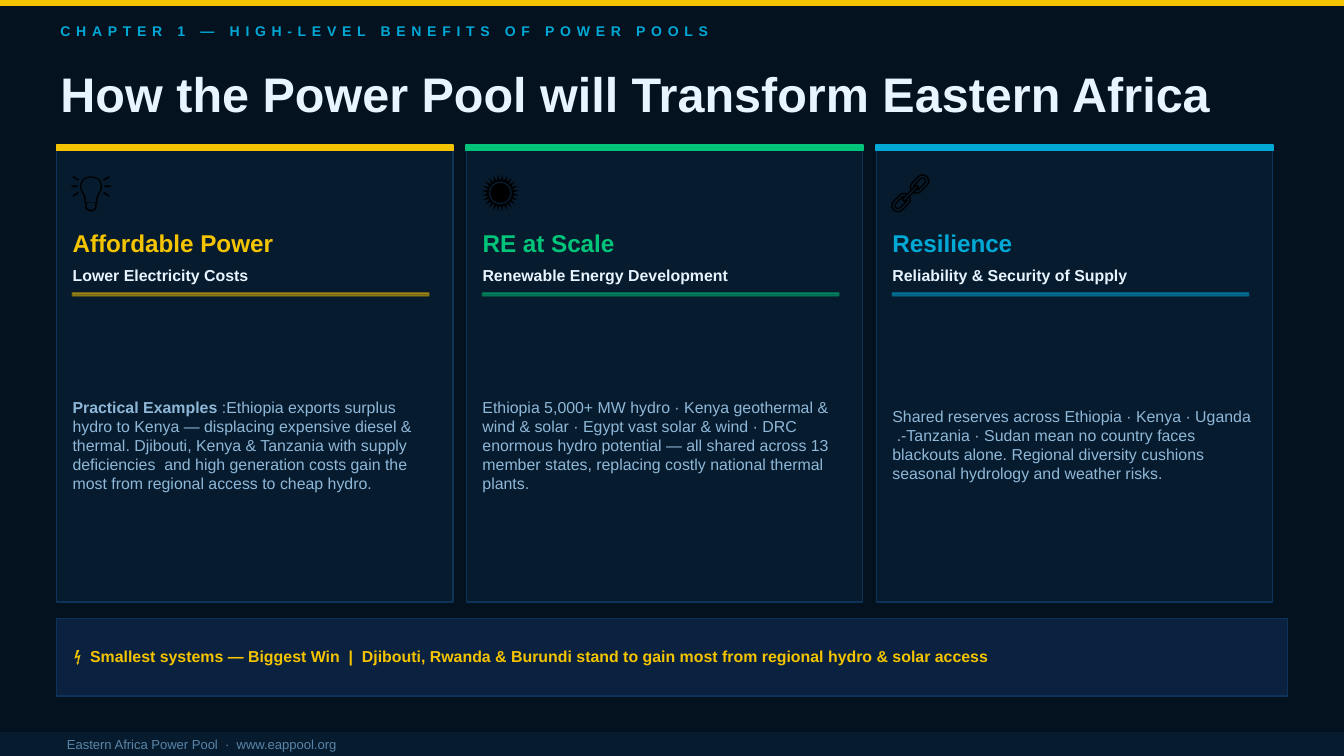
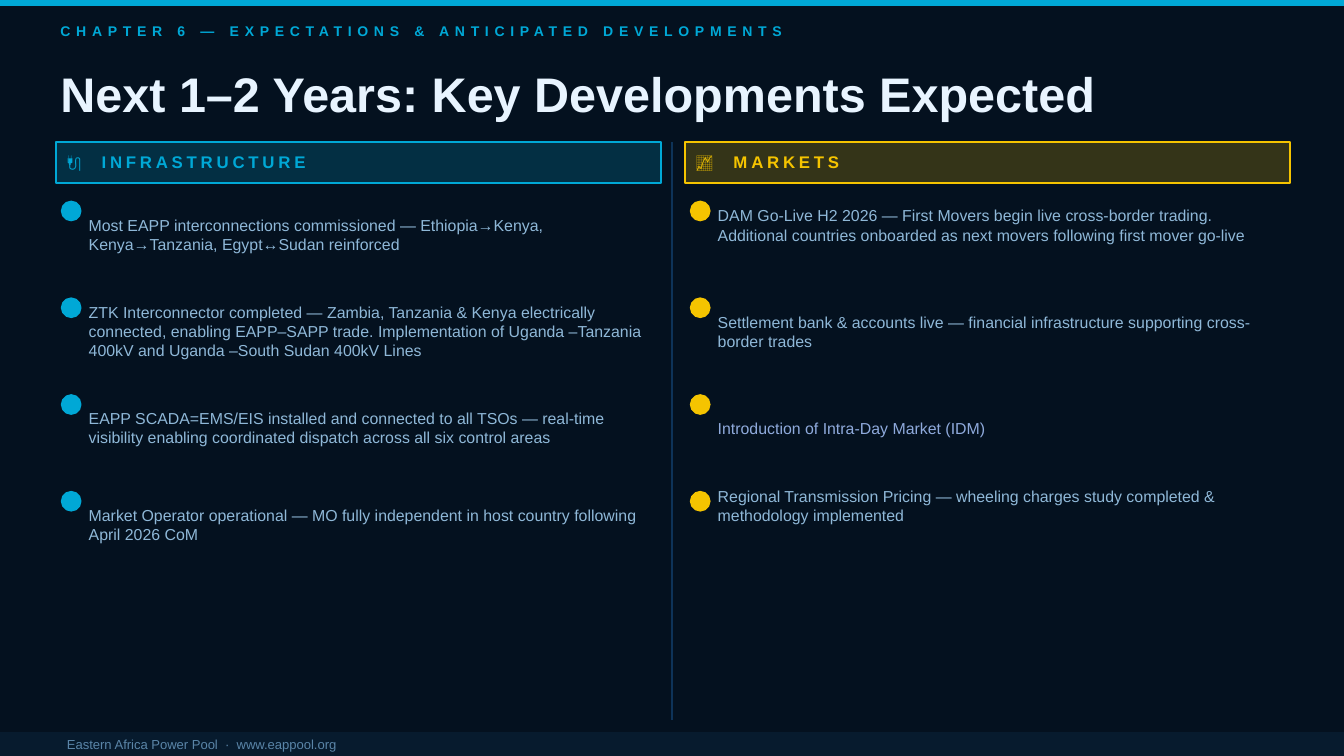
from dataclasses import dataclass
from typing import NamedTuple

from lxml.etree import SubElement
from pptx import Presentation
from pptx.dml.color import RGBColor
from pptx.enum.shapes import MSO_CONNECTOR, MSO_SHAPE
from pptx.enum.text import MSO_ANCHOR
from pptx.oxml.ns import qn
from pptx.presentation import Presentation as Deck
from pptx.slide import Slide
from pptx.util import Emu, Pt

EMU_PER_PX = 9144


@dataclass(frozen=True)
class Theme:
    font: str = "Arial"
    background: str = "04111F"
    panel: str = "071B2E"
    callout: str = "0A2240"
    border: str = "0E3358"
    heading: str = "E8F4FF"
    body: str = "8FB8D8"
    body_violet: str = "8FAADC"
    footer: str = "5A85A8"
    icon: str = "000000"
    yellow: str = "F5C400"
    green: str = "00C47A"
    blue: str = "00A8D6"
    title_size: float = 26
    icon_size: float = 22
    card_size: float = 13
    column_size: float = 9
    body_size: float = 8.5
    chapter_size: float = 7.5
    footer_size: float = 7
    border_width: float = 0.75


THEME = Theme()


class Box(NamedTuple):
    left: int
    top: int
    width: int
    height: int


class Card(NamedTuple):
    icon: str
    title: str
    subtitle: str
    text: str
    color: str
    lead: str = ""


class Item(NamedTuple):
    paragraphs: tuple[str, ...]
    color: str = THEME.body
    height: int = 65


class Column(NamedTuple):
    heading: str
    color: str
    items: tuple[Item, ...]


CARDS = (
    Card(
        "💡", "Affordable Power", "Lower Electricity Costs",
        ":Ethiopia exports surplus hydro to Kenya — displacing expensive diesel & thermal. "
        "Djibouti, Kenya & Tanzania with supply deficiencies  and high generation costs "
        "gain the most from regional access to cheap hydro.",
        THEME.yellow, "Practical Examples ",
    ),
    Card(
        "☀️", "RE at Scale", "Renewable Energy Development",
        "Ethiopia 5,000+ MW hydro · Kenya geothermal & wind & solar · Egypt vast solar & wind · "
        "DRC enormous hydro potential — all shared across 13 member states, "
        "replacing costly national thermal plants.",
        THEME.green,
    ),
    Card(
        "🔗", "Resilience", "Reliability & Security of Supply",
        "Shared reserves across Ethiopia · Kenya · Uganda   .-Tanzania · Sudan mean no country "
        "faces blackouts alone. Regional diversity cushions seasonal hydrology and weather risks.",
        THEME.blue,
    ),
)

COLUMNS = (
    Column("🔌  INFRASTRUCTURE", THEME.blue, (
        Item(("Most EAPP interconnections commissioned — Ethiopia→Kenya, "
              "Kenya→Tanzania, Egypt↔Sudan reinforced",)),
        Item(("ZTK Interconnector completed — Zambia, Tanzania & Kenya electrically connected, "
              "enabling EAPP–SAPP trade. Implementation of Uganda –Tanzania 400kV "
              "and Uganda –South Sudan 400kV Lines",)),
        Item(("EAPP SCADA=EMS/EIS installed and connected to all TSOs — real-time visibility "
              "enabling coordinated dispatch across all six control areas",)),
        Item(("Market Operator operational — MO fully independent in host country "
              "following April 2026 CoM",)),
    )),
    Column("📈  MARKETS", THEME.yellow, (
        Item(("DAM Go-Live H2 2026 — First Movers begin live cross-border trading.",
              "Additional countries onboarded as next movers following first mover go-live"),
             height=51),
        Item(("Settlement bank & accounts live — financial infrastructure supporting "
              "cross-border trades",)),
        Item(("Introduction of Intra-Day Market (IDM)",), color=THEME.body_violet),
        Item(("Regional Transmission Pricing — wheeling charges study completed & "
              "methodology implemented",), height=37),
    )),
)


def px(length: int) -> Emu:
    return Emu(length * EMU_PER_PX)


def rgb(color: str) -> RGBColor:
    return RGBColor.from_string(color)


def add_text(
    slide: Slide, box: Box, *paragraphs: str, size: float = THEME.body_size,
    color: str = THEME.body, bold: bool = False, tracking: int = 0,
    lead: str = "", side_inset: int = 0,
) -> None:
    frame = slide.shapes.add_textbox(*map(px, box)).text_frame
    frame.word_wrap = True
    frame.vertical_anchor = MSO_ANCHOR.MIDDLE
    frame.margin_left = frame.margin_right = px(side_inset)
    frame.margin_top = frame.margin_bottom = 0
    for index, text in enumerate(paragraphs):
        paragraph = frame.add_paragraph() if index else frame.paragraphs[0]
        runs = [(text, bold)]
        if lead and not index:
            runs.insert(0, (lead, True))
        for content, is_bold in runs:
            run = paragraph.add_run()
            run.text = content
            run.font.name = THEME.font
            run.font.size = Pt(size)
            run.font.bold = is_bold
            run.font.color.rgb = rgb(color)
            if tracking:
                run.font._element.set("spc", str(tracking * 100))


def add_panel(
    slide: Slide, box: Box, fill: str, line: str = "", width: float = 1,
    kind: MSO_SHAPE = MSO_SHAPE.RECTANGLE, fill_alpha: int = 100, line_alpha: int = 100,
) -> None:
    shape = slide.shapes.add_shape(kind, *map(px, box))
    shape.shadow.inherit = False
    shape.fill.solid()
    shape.fill.fore_color.rgb = rgb(fill)
    shape.line.color.rgb = rgb(line or fill)
    shape.line.width = Pt(width)
    properties = shape.element.spPr
    for parent, alpha in ((properties, fill_alpha), (properties.find(qn("a:ln")), line_alpha)):
        if alpha < 100:
            color = parent.find(qn("a:solidFill")).find(qn("a:srgbClr"))
            SubElement(color, qn("a:alpha")).set("val", str(alpha * 1000))


def add_divider(slide: Slide, left: int, top: int, bottom: int) -> None:
    line = slide.shapes.add_connector(
        MSO_CONNECTOR.STRAIGHT, px(left), px(top), px(left), px(bottom)
    )
    line.line.color.rgb = rgb(THEME.border)
    line.line.width = Pt(THEME.border_width)
    SubElement(line.element.spPr, qn("a:effectLst"))


def add_base_slide(presentation: Deck, chapter: str, title: str, accent: str) -> Slide:
    slide = presentation.slides.add_slide(presentation.slide_layouts[6])
    slide.background.fill.solid()
    slide.background.fill.fore_color.rgb = rgb(THEME.background)
    add_panel(slide, Box(0, 0, 1000, 4), accent)
    add_text(slide, Box(45, 12, 900, 22), chapter,
             size=THEME.chapter_size, color=THEME.blue, bold=True, tracking=3)
    add_text(slide, Box(45, 42, 910, 55), title,
             size=THEME.title_size, color=THEME.heading, bold=True)
    add_panel(slide, Box(0, 545, 1000, 18), THEME.panel)
    add_text(slide, Box(40, 546, 920, 15), "Eastern Africa Power Pool  ·  www.eappool.org",
             size=THEME.footer_size, color=THEME.footer, side_inset=10)
    return slide


def add_card(slide: Slide, left: int, card: Card) -> None:
    inner = left + 12
    add_panel(slide, Box(left, 108, 295, 340), THEME.panel, THEME.border, THEME.border_width)
    add_panel(slide, Box(left, 108, 295, 4), card.color)
    add_text(slide, Box(left + 10, 118, 60, 45), card.icon,
             size=THEME.icon_size, color=THEME.icon)
    add_text(slide, Box(inner, 166, 275, 30), card.title,
             size=THEME.card_size, color=card.color, bold=True)
    add_text(slide, Box(inner, 194, 275, 22), card.subtitle, color=THEME.heading, bold=True)
    add_panel(slide, Box(inner, 218, 265, 2), card.color, fill_alpha=40, line_alpha=40)
    add_text(slide, Box(inner, 226, 273, 210), card.text, lead=card.lead)


def add_column(slide: Slide, left: int, column: Column) -> None:
    add_panel(slide, Box(left, 106, 450, 30), column.color, fill_alpha=20)
    add_text(slide, Box(left + 8, 107, 430, 27), column.heading,
             size=THEME.column_size, color=column.color, bold=True, tracking=2)
    for row, item in enumerate(column.items):
        top = 142 + row * 72
        add_panel(slide, Box(left + 4, top + 8, 14, 14), column.color, kind=MSO_SHAPE.OVAL)
        add_text(slide, Box(left + 24, top, 418, item.height), *item.paragraphs,
                 color=item.color)


def build_benefits(presentation: Deck) -> None:
    slide = add_base_slide(
        presentation, "CHAPTER 1 — HIGH-LEVEL BENEFITS OF POWER POOLS",
        "How the Power Pool will Transform Eastern Africa", THEME.yellow,
    )
    for index, card in enumerate(CARDS):
        add_card(slide, 42 + index * 305, card)
    add_panel(slide, Box(42, 460, 916, 58), THEME.callout, THEME.border, THEME.border_width)
    add_text(
        slide, Box(55, 462, 900, 52),
        "⚡  Smallest systems — Biggest Win  |  Djibouti, Rwanda & Burundi stand to gain most "
        "from regional hydro & solar access",
        color=THEME.yellow, bold=True,
    )


def build_developments(presentation: Deck) -> None:
    slide = add_base_slide(
        presentation, "CHAPTER 6 — EXPECTATIONS & ANTICIPATED DEVELOPMENTS",
        "Next 1–2 Years: Key Developments Expected", THEME.blue,
    )
    for index, column in enumerate(COLUMNS):
        add_column(slide, 42 + index * 468, column)
    add_divider(slide, 500, 106, 536)


def main() -> None:
    presentation = Presentation()
    presentation.slide_width = px(1000)
    presentation.slide_height = Emu(px(1000) * 9 // 16)
    build_benefits(presentation)
    build_developments(presentation)
    presentation.save("out.pptx")


if __name__ == "__main__":
    main()
